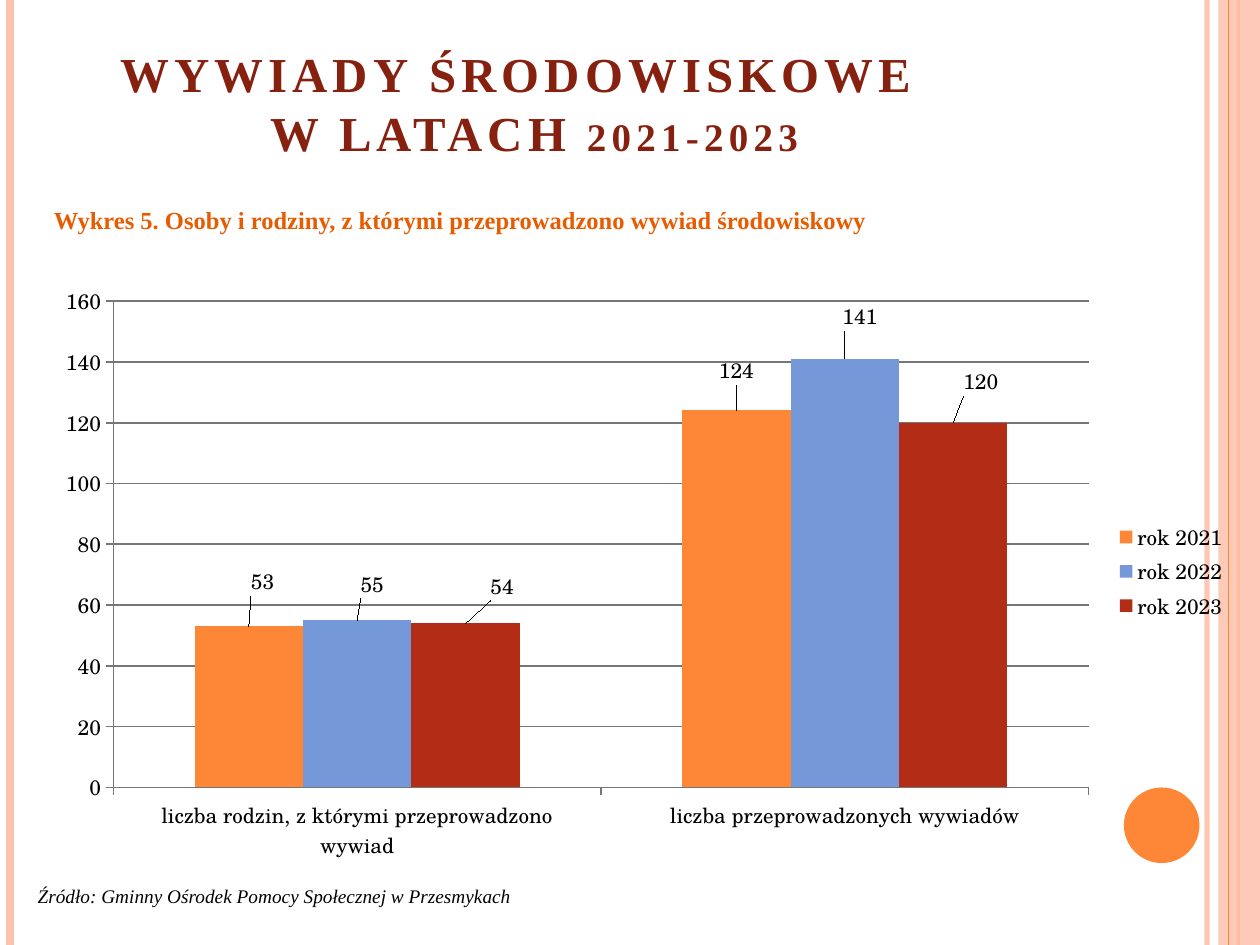
from dataclasses import dataclass

import lxml.etree as etree
import pptx
import pptx.chart.data
import pptx.dml.color
import pptx.enum.chart
import pptx.enum.shapes
import pptx.enum.text
import pptx.oxml
import pptx.oxml.ns
import pptx.util

Inches, Pt = pptx.util.Inches, pptx.util.Pt
RGB = pptx.dml.color.RGBColor.from_string
qn = pptx.oxml.ns.qn
MSO_SHAPE = pptx.enum.shapes.MSO_SHAPE
PP_ALIGN = pptx.enum.text.PP_ALIGN
MSO_ANCHOR = pptx.enum.text.MSO_ANCHOR
XL = pptx.enum.chart

NO_LEADER_LINES = (
    '<c:extLst xmlns:c="http://schemas.openxmlformats.org/drawingml/2006/chart">'
    '<c:ext uri="{CE6537A1-D6FC-4f65-9D91-7224C49458BB}"'
    ' xmlns:c15="http://schemas.microsoft.com/office/drawing/2012/chart">'
    '<c15:showLeaderLines val="0"/></c:ext></c:extLst>')


@dataclass(frozen=True)
class Theme:
    text_font: str = "Times New Roman"
    chart_font: str = "TeX Gyre Schola"
    black: str = "000000"
    peach: str = "FEC3AE"
    orange: str = "FE8637"
    blue: str = "7598D9"
    red: str = "B32C16"
    title: str = "862110"
    caption: str = "E75C01"
    grid: str = "767676"
    title_size: float = 27.9
    caption_size: float = 14
    chart_size: float = 12
    source_size: float = 11


def set_alpha(shape, percent):
    color = next(shape.element.spPr.iter(qn("a:srgbClr")))
    etree.SubElement(color, qn("a:alpha"), val=str(percent * 1000))


def add_layout(parent, index, chart_size, lengths, **modes):
    """Insert a manual layout, given in inches, as the given child of parent."""
    for old in parent.findall(qn("c:layout")):
        parent.remove(old)
    layout = etree.Element(qn("c:layout"))
    manual = etree.SubElement(layout, qn("c:manualLayout"))
    shares = {name: length / side for name, length, side in zip("xywh", lengths, chart_size * 2)}
    for name, value in {**modes, **shares}.items():
        etree.SubElement(manual, qn(f"c:{name}"), val=str(value))
    parent.insert(index, layout)


class SlideBuilder:
    def __init__(self, slide, theme):
        self.s, self.theme = slide, theme

    def vertical_line(self, x, width, color, alpha=None):
        line = self.s.shapes.add_connector(
            pptx.enum.shapes.MSO_CONNECTOR.STRAIGHT,
            Inches(x), Inches(0), Inches(x), Inches(7.5))
        line.line.color.rgb = RGB(color)
        line.line.width = Pt(width)
        if alpha:
            set_alpha(line, alpha)
        etree.SubElement(line.element.spPr, qn("a:effectLst"))

    def shape(self, kind, box, color, alpha=None):
        sp = self.s.shapes.add_shape(kind, *map(Inches, box))
        sp.shadow.inherit = False
        sp.fill.solid()
        sp.fill.fore_color.rgb = RGB(color)
        sp.line.fill.background()
        if alpha:
            set_alpha(sp, alpha)

    def text(self, box, lines, color, font, frame=None, para=None, run_xml=None, para_xml=None):
        """Add one paragraph whose lines are parted by line breaks."""
        tf = self.s.shapes.add_textbox(*map(Inches, box)).text_frame
        p = tf.paragraphs[0]
        for target, formats in ((tf, {"word_wrap": True, **(frame or {})}), (p, para or {})):
            for name, value in formats.items():
                setattr(target, name, value)
        for name, value in (para_xml or {}).items():
            p._p.get_or_add_pPr().set(name, str(value))
        for i, line in enumerate(lines):
            if i:
                p.add_line_break()
            r = p.add_run()
            r.text = line
            r.font.color.rgb = RGB(color)
            for name, value in {"name": self.theme.text_font, **font}.items():
                setattr(r.font, name, value)
            for name, value in (run_xml or {}).items():
                r.font._element.set(name, value)

    def column_chart(self, box, categories, series, plot_box, legend_box):
        data = pptx.chart.data.CategoryChartData()
        data.categories = categories
        for name, values, _, _ in series:
            data.add_series(name, values)
        chart = self.s.shapes.add_chart(
            XL.XL_CHART_TYPE.COLUMN_CLUSTERED, *map(Inches, box), data).chart
        size = box[2:]
        chart.has_title = False
        formats = {"name": self.theme.chart_font, "size": Pt(self.theme.chart_size)}
        for name, value in formats.items():
            setattr(chart.font, name, value)
        chart.font.color.rgb = RGB(self.theme.black)

        chart.has_legend = True
        chart.legend.position = XL.XL_LEGEND_POSITION.RIGHT
        chart.legend.include_in_layout = False
        edges = {"xMode": "edge", "yMode": "edge"}
        add_layout(chart.legend._element, 1, size, legend_box, **edges)
        plot_area = next(chart.element.iter(qn("c:plotArea")))
        add_layout(plot_area, 0, size, plot_box, layoutTarget="inner", **edges)

        val = chart.value_axis
        val.minimum_scale, val.maximum_scale, val.major_unit = 0, 160, 20
        val.has_major_gridlines = True
        for line in (val.major_gridlines.format.line, val.format.line,
                     chart.category_axis.format.line):
            line.color.rgb = RGB(self.theme.grid)
            line.width = Pt(1)
        for axis in (val, chart.category_axis):
            axis.major_tick_mark = XL.XL_TICK_MARK.OUTSIDE

        plot = chart.plots[0]
        plot.gap_width, plot.overlap, plot.vary_by_categories = 150, 0, False
        for ser, (_, _, color, offsets) in zip(plot.series, series):
            ser.format.fill.solid()
            ser.format.fill.fore_color.rgb = RGB(color)
            ser.data_labels.show_value = True
            for i in range(len(offsets)):
                label = ser.points[i].data_label
                label.font.size = Pt(self.theme.chart_size)
                label.position = XL.XL_LABEL_POSITION.OUTSIDE_END
            for label, offset in zip(ser._element.iter(qn("c:dLbl")), offsets):
                add_layout(label, 1, size, offset)
            ser.data_labels._element.append(pptx.oxml.parse_xml(NO_LEADER_LINES))


def main():
    prs = pptx.Presentation()
    prs.slide_width, prs.slide_height = Inches(10), Inches(7.5)
    t = Theme()
    b = SlideBuilder(prs.slides.add_slide(prs.slide_layouts[6]), t)

    b.vertical_line(9.58, 3, t.peach, alpha=93)
    b.vertical_line(0.08, 4.5, t.peach)
    b.vertical_line(9.83, 1.5, t.orange)
    b.shape(MSO_SHAPE.RECTANGLE, (9.67, 0, 0.33, 7.5), t.peach, alpha=87)
    b.vertical_line(9.75, 0.75, t.orange)
    b.shape(MSO_SHAPE.OVAL, (8.92, 6.25, 0.6, 0.6), t.orange)

    b.text((0.53, 0.53, 8.17, 1.25), ["WYWIADY ŚRODOWISKOWE ", "W LATACH 2021-2023"], t.title,
           {"size": Pt(t.title_size), "bold": True},
           frame={"vertical_anchor": MSO_ANCHOR.BOTTOM, "margin_bottom": Inches(0.5)},
           para={"alignment": PP_ALIGN.CENTER}, run_xml={"cap": "small", "spc": "300"})
    b.text((0.33, 1.58, 9.47, 0.53),
           ["Wykres 5. Osoby i rodziny, z którymi przeprowadzono wywiad środowiskowy"], t.caption,
           {"size": Pt(t.caption_size), "bold": True}, para={"space_before": Pt(6)},
           para_xml={"marL": Inches(0.3), "indent": -Inches(0.3)})

    b.column_chart(
        (0.33, 2.17, 9.5, 4.74),
        ["liczba rodzin, z którymi przeprowadzono wywiad", "liczba przeprowadzonych wywiadów"],
        [("rok 2021", (53, 124), t.orange, [(0.11, -0.2), (0, -0.16)]),
         ("rok 2022", (55, 141), t.blue, [(0.12, -0.13), (0.12, -0.18)]),
         ("rok 2023", (54, 120), t.red, [(0.29, -0.14), (0.22, -0.17)])],
        plot_box=(0.57, 0.22, 7.74, 3.86), legend_box=(8.49, 1.94, 0.95, 0.85))

    b.text((0.2, 6.97, 5, 0.29), ["Źródło: Gminny Ośrodek Pomocy Społecznej w Przesmykach"],
           t.black, {"size": Pt(t.source_size), "italic": True})
    prs.save("out.pptx")


if __name__ == "__main__":
    main()
